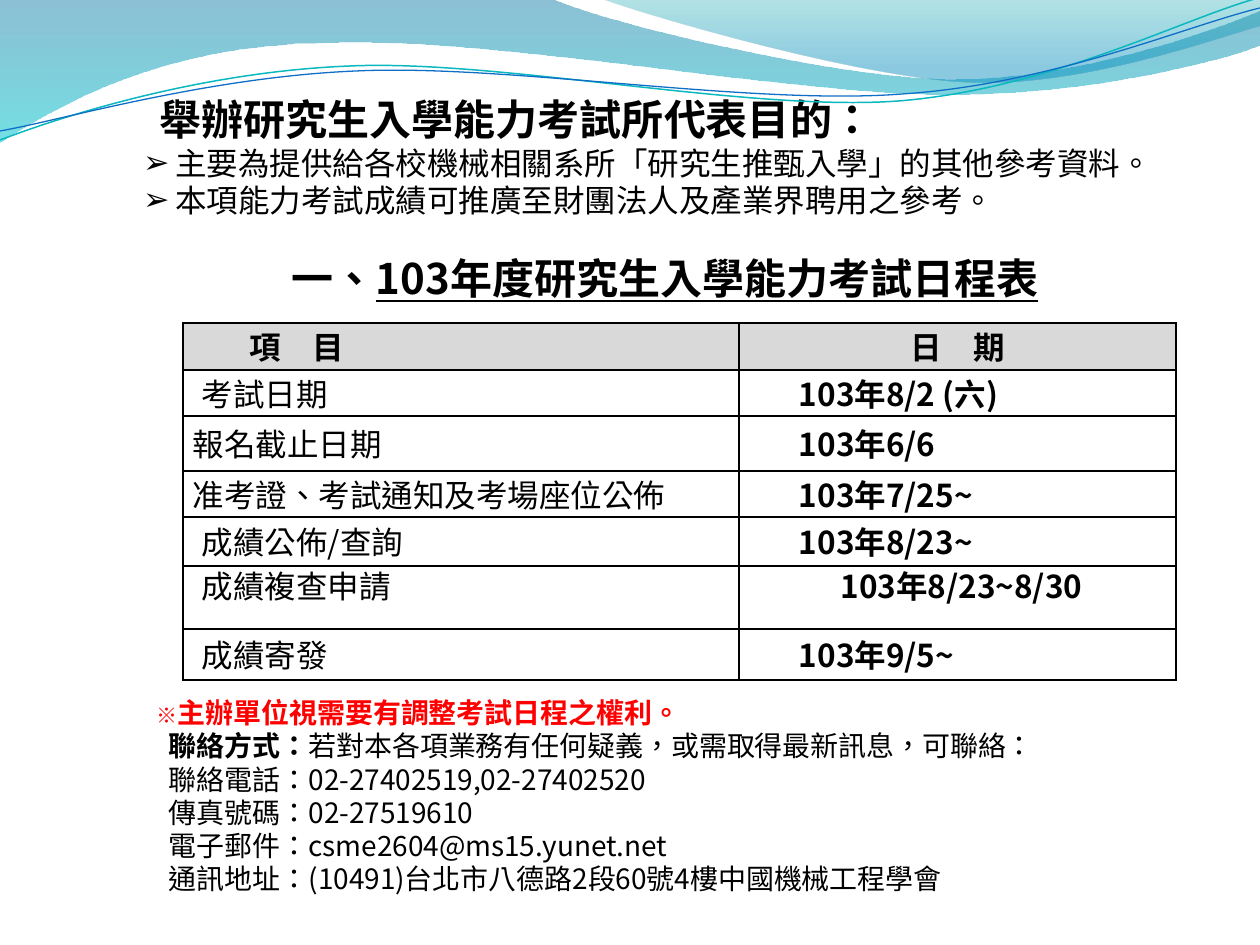
from lxml import etree
from pptx import Presentation
from pptx import util as u
from pptx.dml.color import RGBColor
from pptx.enum import lang
from pptx.enum import text as t
from pptx.oxml import ns

SCALE = 914400 / 126  # EMU per px
FONT = "Noto Sans CJK SC"
COLORS = {"text": "000000", "notice": "FF0000", "header": "D9D9D9",
          "teal line": "0AB8BF", "blue line": "0F6FC6"}

PURPOSE = "舉辦研究生入學能力考試所代表目的："
REASONS = ["主要為提供給各校機械相關系所「研究生推甄入學」的其他參考資料。",
           "本項能力考試成績可推廣至財團法人及產業界聘用之參考。"]
SCHEDULE_HEADING = ("一、", "103年度研究生入學能力考試日程表")

# item, left inset, date, row height
COLUMN_WIDTHS = [556, 437]
SCHEDULE = [
    ("項　目", 67, "日　期", 47),
    ("考試日期", 19, "103年8/2 (六)", 46),
    ("報名截止日期", 10, "103年6/6", 55),
    ("准考證、考試通知及考場座位公佈", 10, "103年7/25~", 46),
    ("成績公佈/查詢", 19, "103年8/23~", 49),
    ("成績複查申請", 19, "103年8/23~8/30", 63),
    ("成績寄發", 19, "103年9/5~", 51),
]
DATE_INSET = 60
CENTERED_INSETS = {0: 3, 5: 11}
RECHECK_ROW = 5

NOTICE = ("※", "主辦單位視需要有調整考試日程之權利。")
CONTACTS = [
    ("聯絡方式：", "若對本各項業務有任何疑義，或需取得最新訊息，可聯絡："),
    ("", "聯絡電話：02-27402519,02-27402520"),
    ("", "傳真號碼：02-27519610"),
    ("", "電子郵件：csme2604@ms15.yunet.net"),
    ("", "通訊地址：(10491)台北市八德路2段60號4樓中國機械工程學會"),
]

# Each step is a line end (one point) or a cubic curve (three points).
BANDS = [
    ((0, 0),
     [[(554, 0)], [(600, 21), (837, 79), (955, 79)],
      [(1075, 79), (1207, 33), (1260, 11)], [(1260, 45)],
      [(1239, 55), (1096, 96), (940, 94)], [(784, 94), (481, 35), (324, 43)],
      [(163, 45), (58, 105), (0, 142)]],
     [(0, "0074A1", 45), (1, "00C6CF", 55)]),
    ((604, 0),
     [[(641, 14), (859, 78), (969, 82)],
      [(1079, 87), (1211, 40), (1260, 26)], [(1260, 0)]],
     [(0, "00A1A9", 30), (0.8, "008BBF", 45)]),
]
RIPPLES = [
    ((0, 140),
     [[(60, 117), (199, 72), (349, 66)], [(498, 59), (747, 112), (898, 101)],
      [(1050, 89), (1182, 19), (1258, -2)]], "teal line", 0.85),
    ((0, 131),
     [[(59, 121), (207, 77), (357, 71)], [(508, 64), (752, 106), (903, 94)],
      [(1053, 84), (1186, 26), (1260, 8)]], "blue line", 0.75),
]


def px(length):
    return u.Emu(round(length * SCALE))


def rgb(name):
    return RGBColor.from_string(COLORS[name])


def sub(parent, tag, **attributes):
    return etree.SubElement(parent, ns.qn(tag), attributes)


def add_wave(slide, start, steps, closed):
    """Outline the step ends, then bend the three-point steps into cubic curves."""
    builder = slide.shapes.build_freeform(px(start[0]), px(start[1]), scale=1.0)
    builder.add_line_segments([(px(x), px(y)) for x, y in (s[-1] for s in steps)],
                              close=closed)
    wave = builder.convert_to_shape()
    wave.shadow.inherit = False
    segments = list(wave._element.iter(ns.qn("a:lnTo")))
    for segment, step in zip(segments, steps):
        if len(step) == 3:
            curve = etree.Element(ns.qn("a:cubicBezTo"))
            for x, y in step:
                sub(curve, "a:pt", x=str(px(x) - wave.left), y=str(px(y) - wave.top))
            segment.getparent().replace(segment, curve)
    return wave


def add_waves(slide):
    for start, steps, stops in BANDS:
        band = add_wave(slide, start, steps, True)
        band.line.fill.background()
        band.fill.gradient()
        band.fill.gradient_angle = 270
        for stop, (position, color, opacity) in zip(band.fill.gradient_stops, stops):
            stop.position = position
            stop.color.rgb = RGBColor.from_string(color)
        for tint, (_, _, opacity) in zip(band._element.iter(ns.qn("a:srgbClr")), stops):
            sub(tint, "a:alpha", val=str(opacity * 1000))
    for start, steps, color, width in RIPPLES:
        ripple = add_wave(slide, start, steps, False)
        ripple.fill.background()
        ripple.line.color.rgb = rgb(color)
        ripple.line.width = u.Pt(width)


def style(paragraph, size, spacing, bold=False, color="text", align=t.PP_ALIGN.LEFT):
    paragraph.alignment = align
    paragraph.line_spacing = u.Pt(spacing)
    paragraph.space_before = u.Pt(0)
    font = paragraph.font
    font.name, font.size, font.bold = FONT, u.Pt(size), bold
    font.color.rgb = rgb(color)
    sub(paragraph._p.pPr.find(ns.qn("a:defRPr")), "a:ea", typeface=FONT)
    for run in paragraph.runs:
        run.font.language_id = lang.MSO_LANGUAGE_ID.TRADITIONAL_CHINESE


def indent(paragraph, left, first=0):
    paragraph._p.pPr.set("marL", str(px(left)))
    paragraph._p.pPr.set("indent", str(px(first)))


def place(shape, left, top, width, height):
    """Move a text shape and return its frame, without insets or autofit."""
    shape.left, shape.top, shape.width, shape.height = map(px, (left, top, width, height))
    frame = shape.text_frame
    frame.word_wrap = True
    frame.auto_size = t.MSO_AUTO_SIZE.NONE
    frame.vertical_anchor = t.MSO_ANCHOR.TOP
    frame.margin_left = frame.margin_right = frame.margin_top = frame.margin_bottom = 0
    return frame


def add_paragraphs(frame, count):
    return [frame.paragraphs[0]] + [frame.add_paragraph() for _ in range(count - 1)]


def add_purpose(slide):
    title, body = slide.placeholders
    heading = place(title, 160, 95, 1000, 50).paragraphs[0]
    heading.text = PURPOSE
    style(heading, 24, 28, bold=True)
    frame = place(body, 143, 145, 1070, 76)
    for paragraph, reason in zip(add_paragraphs(frame, len(REASONS)), REASONS):
        paragraph.text = reason
        style(paragraph, 18, 21)
        indent(paragraph, 32, -32)
        bullet = etree.Element(ns.qn("a:buChar"), char="➢")
        paragraph._p.pPr.find(ns.qn("a:defRPr")).addprevious(bullet)


def add_schedule(slide):
    box = slide.shapes.add_textbox(0, 0, 0, 0)
    heading = place(box, 265, 254, 800, 50).paragraphs[0]
    for part in SCHEDULE_HEADING:
        heading.add_run().text = part
    heading.runs[1].font.underline = True
    style(heading, 24, 28, bold=True, align=t.PP_ALIGN.CENTER)

    table = slide.shapes.add_table(len(SCHEDULE), 2, px(183), px(323), px(993), px(357)).table
    table.first_row = table.horz_banding = False
    for column, width in zip(table.columns, COLUMN_WIDTHS):
        column.width = px(width)
    for r, (item, inset, date, height) in enumerate(SCHEDULE):
        table.rows[r].height = px(height)
        date_inset = CENTERED_INSETS.get(r, DATE_INSET)
        fill_cell(table.cell(r, 0), r, item, inset, r == 0, False)
        fill_cell(table.cell(r, 1), r, date, date_inset, True, r in CENTERED_INSETS)


def fill_cell(cell, row, words, inset, bold, centered):
    recheck = row == RECHECK_ROW
    cell.margin_left, cell.margin_right = px(inset), px(3)
    cell.margin_top, cell.margin_bottom = px(5 if recheck else 8), 0
    cell.vertical_anchor = t.MSO_ANCHOR.TOP if recheck else t.MSO_ANCHOR.MIDDLE
    paragraph = cell.text_frame.paragraphs[0]
    paragraph.text = words
    style(paragraph, 18, 21, bold,
          align=t.PP_ALIGN.CENTER if centered else t.PP_ALIGN.LEFT)
    for side in "LRTB":
        border = sub(cell._tc.get_or_add_tcPr(), f"a:ln{side}", w="12700")
        sub(sub(border, "a:solidFill"), "a:srgbClr", val=COLORS["text"])
    if row == 0:
        cell.fill.solid()
        cell.fill.fore_color.rgb = rgb("header")
    else:
        cell.fill.background()


def add_contacts(slide):
    frame = place(slide.shapes.add_textbox(0, 0, 0, 0), 157, 696, 1019, 204)
    notice, *lines = add_paragraphs(frame, len(CONTACTS) + 1)
    for part in NOTICE:
        notice.add_run().text = part
    notice.runs[0].font.size = u.Pt(12)
    style(notice, 16, 19, bold=True, color="notice")
    for paragraph, (label, detail) in zip(lines, CONTACTS):
        if label:
            run = paragraph.add_run()
            run.text, run.font.bold = label, True
        paragraph.add_run().text = detail
        style(paragraph, 16, 19)
        indent(paragraph, 12)


def main():
    deck = Presentation()
    deck.slide_width, deck.slide_height = px(1260), px(945)
    slide = deck.slides.add_slide(deck.slide_layouts[1])
    add_waves(slide)
    add_purpose(slide)
    add_schedule(slide)
    add_contacts(slide)
    deck.save("out.pptx")


if __name__ == "__main__":
    main()
